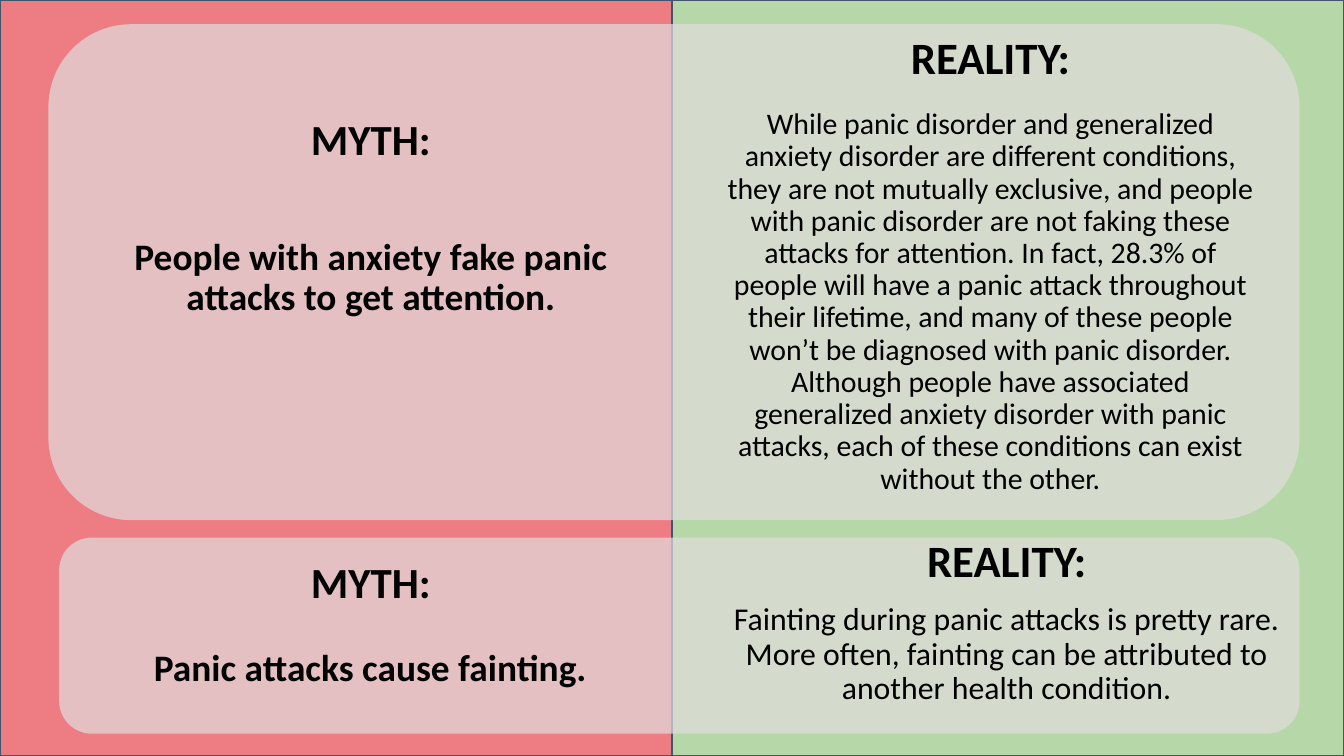
from lxml.etree import SubElement
from pptx import Presentation
from pptx.dml.color import RGBColor
from pptx.enum.shapes import MSO_SHAPE as Shape
from pptx.enum.text import MSO_ANCHOR as Anchor, PP_ALIGN as Align
from pptx.oxml.ns import qn
from pptx.util import Inches, Pt

COLORS = {
    "myth": "ED7C83",
    "reality": "B6D7A8",
    "card": "E2DEDE",
    "border": "44546A",
    "text": "000000",
}
FORMATS = {
    "myth_heading": {"size": Pt(23), "bold": True},
    "reality_heading": {"size": Pt(24), "bold": True},
    "myth": {"size": Pt(20), "bold": True},
    "long_reality": {"size": Pt(16), "bold": False},
    "short_reality": {"size": Pt(17), "bold": False},
}
COLUMNS, ROWS = 100, 56.25
REALITY_INDENT = Inches(0.19)


class MythSlide:
    font_name = "Calibri"

    def __init__(self, presentation):
        self.column = presentation.slide_width / COLUMNS
        self.row = presentation.slide_height / ROWS
        self.slide = presentation.slides.add_slide(presentation.slide_layouts[6])

    def place(self, left, top, width, height):
        return (
            round(left * self.column),
            round(top * self.row),
            round(width * self.column),
            round(height * self.row),
        )

    def box(self, kind, area, color):
        shape = self.slide.shapes.add_shape(kind, *self.place(*area))
        shape.shadow.inherit = False
        shape.fill.solid()
        shape.fill.fore_color.rgb = RGBColor.from_string(COLORS[color])
        return shape

    def panel(self, area, color):
        shape = self.box(Shape.RECTANGLE, area, color)
        shape.line.color.rgb = RGBColor.from_string(COLORS["border"])
        shape.line.width = Pt(0.75)

    def card(self, area):
        shape = self.box(Shape.ROUNDED_RECTANGLE, area, "card")
        shape.adjustments[0] = 0.167
        shape.line.fill.background()
        color = shape.fill._xPr.find(qn("a:solidFill"))[0]
        SubElement(color, qn("a:alpha"), val="70000")

    def text(self, area, text, style, spacing=0.9, indent=0):
        shape = self.slide.shapes.add_textbox(*self.place(*area))
        frame_format = {
            "word_wrap": True,
            "vertical_anchor": Anchor.TOP,
            "margin_left": Inches(0.07),
            "margin_right": Inches(0.07),
            "margin_top": Inches(0.04),
            "margin_bottom": Inches(0.04),
        }
        for name, value in frame_format.items():
            setattr(shape.text_frame, name, value)
        paragraph = shape.text_frame.paragraphs[0]
        paragraph.alignment = Align.CENTER
        paragraph.line_spacing = spacing
        if indent:
            properties = paragraph._p.get_or_add_pPr()
            properties.set("marL", str(indent))
            properties.set("indent", "0")
        run = paragraph.add_run()
        run.text = text
        for name, value in {"name": self.font_name, **FORMATS[style]}.items():
            setattr(run.font, name, value)
        run.font.color.rgb = RGBColor.from_string(COLORS["text"])
        return run

    def heading(self, area, text, style, indent=0):
        run = self.text(area, text, style, 0.8, indent)
        properties = run._r.get_or_add_rPr()
        effects = SubElement(properties, qn("a:effectLst"))
        shadow = SubElement(
            effects, qn("a:outerShdw"), blurRad="38100", dist="38100", dir="2700000"
        )
        color = SubElement(shadow, qn("a:srgbClr"), val=COLORS["text"])
        SubElement(color, qn("a:alpha"), val="43000")
        properties.find(qn("a:solidFill")).addnext(effects)


def main():
    presentation = Presentation()
    presentation.slide_width = Inches(10)
    presentation.slide_height = Inches(5.625)
    page = MythSlide(presentation)

    half = COLUMNS / 2
    page.panel((half, 0, half, ROWS), "reality")
    page.panel((0, 0, half, ROWS), "myth")

    page.card((3.6, 1.8, 93.1, 36.9))
    page.card((4.4, 40, 92.3, 14.6))

    for top in (8.7, 41.7):
        page.heading((7.6, top, 40, 5.1), "MYTH:", "myth_heading")
    for left, top in ((51.2, 2.6), (52.4, 40)):
        page.heading(
            (left, top, 43.1, 6.1), "REALITY:", "reality_heading", REALITY_INDENT
        )

    page.text(
        (7.6, 17.3, 40, 7),
        "People with anxiety fake panic attacks to get attention.",
        "myth",
    )
    page.text((6, 47.9, 43.1, 4), "Panic attacks cause fainting.", "myth")
    page.text(
        (51.2, 7.7, 43.1, 30),
        "While panic disorder and generalized anxiety disorder are different "
        "conditions, they are not mutually exclusive, and people with panic "
        "disorder are not faking these attacks for attention. In fact, 28.3% of "
        "people will have a panic attack throughout their lifetime, and many of "
        "these people won’t be diagnosed with panic disorder. Although people "
        "have associated generalized anxiety disorder with panic attacks, each "
        "of these conditions can exist without the other.",
        "long_reality",
        indent=REALITY_INDENT,
    )
    page.text(
        (51.2, 44.5, 45.5, 9),
        "Fainting during panic attacks is pretty rare. More often, fainting can "
        "be attributed to another health condition.",
        "short_reality",
        indent=REALITY_INDENT,
    )
    presentation.save("out.pptx")


if __name__ == "__main__":
    main()
